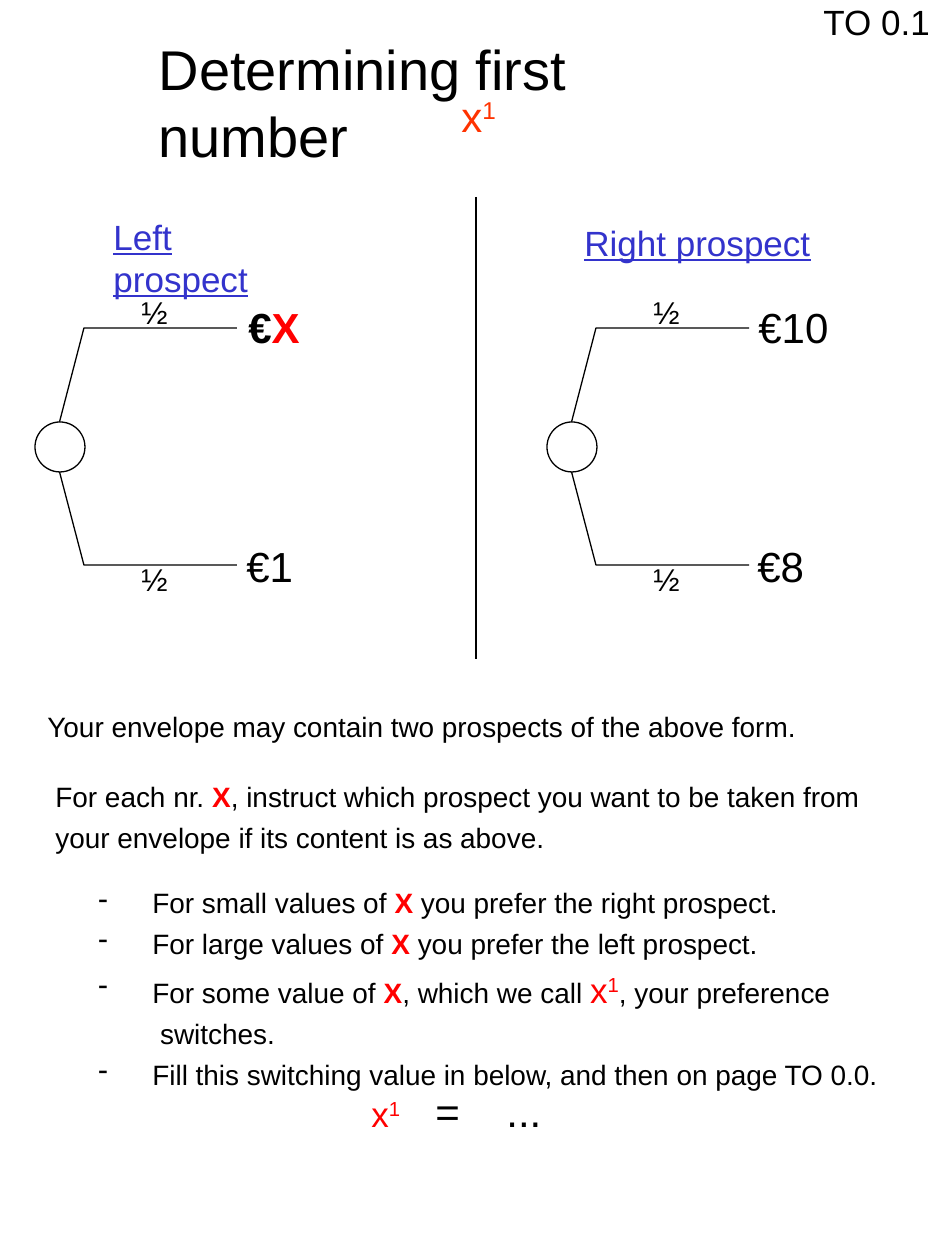
from dataclasses import dataclass

from lxml.etree import SubElement
from pptx import Presentation
from pptx.dml.color import RGBColor
from pptx.enum.shapes import MSO_CONNECTOR as Connector, MSO_SHAPE as Shape
from pptx.enum.text import MSO_ANCHOR as Anchor, MSO_AUTO_SIZE as AutoSize, PP_ALIGN as Align
from pptx.oxml.ns import qn
from pptx.util import Pt

SCALE = 914400 / 126


@dataclass(frozen=True)
class Theme:
    font: str = "Arial"
    ink: str = "000000"
    paper: str = "FFFFFF"
    red: str = "FF0000"
    orange: str = "FF3300"
    blue: str = "3333CC"
    title: int = 32
    amount: int = 24
    heading: int = 20
    chance: int = 18
    body: int = 16
    line: float = 0.75


THEME = Theme()
X = ("X", {"color": THEME.red, "bold": True})
LINE_BREAK = "\n"


def px(length):
    return round(length * SCALE)


def box_px(*lengths):
    return [px(length) for length in lengths]


def rgb(code):
    return RGBColor.from_string(code)


def indexed_x(color, size):
    """Runs for x with the raised index 1."""
    return [("x", {"color": color, "size": size}),
            ("1", {"color": color, "size": size, "raised": True})]


def add_run(paragraph, content, size=THEME.body, color=THEME.ink,
            bold=False, underline=False, raised=False):
    run = paragraph.add_run()
    run.text = content
    font = run.font
    font.name, font.size, font.bold = THEME.font, Pt(size), bold
    font.underline = underline
    font.color.rgb = rgb(color)
    if raised:
        run._r.get_or_add_rPr().set("baseline", "30000")


def add_dash(paragraph, indent):
    props = paragraph._p.get_or_add_pPr()
    props.set("marL", str(px(indent)))
    props.set("indent", str(-px(indent)))
    SubElement(props, qn("a:buFontTx"))
    SubElement(props, qn("a:buChar"), char="-")


def add_tabs(paragraph, stops):
    tabs = SubElement(paragraph._p.get_or_add_pPr(), qn("a:tabLst"))
    for stop in stops:
        SubElement(tabs, qn("a:tab"), pos=str(px(stop)), algn="l")


def write(frame, paragraphs, spacing=None, dash_indent=None, tabs=(), **style):
    """Fill a frame; each paragraph is a string or a list of strings and (string, format) pairs."""
    frame.word_wrap = True
    frame.auto_size = AutoSize.SHAPE_TO_FIT_TEXT
    frame.vertical_anchor = Anchor.TOP
    for index, parts in enumerate(paragraphs):
        paragraph = frame.add_paragraph() if index else frame.paragraphs[0]
        paragraph.alignment = Align.LEFT
        if spacing:
            paragraph.line_spacing = spacing
        if dash_indent:
            add_dash(paragraph, dash_indent)
        if tabs:
            add_tabs(paragraph, tabs)
        for part in [parts] if isinstance(parts, str) else parts:
            if part == LINE_BREAK:
                paragraph.add_line_break()
                continue
            content, own = (part, {}) if isinstance(part, str) else part
            add_run(paragraph, content, **{**style, **own})


def add_text(slide, box, *paragraphs, **style):
    write(slide.shapes.add_textbox(*box_px(*box)).text_frame, paragraphs, **style)


def add_title(slide, box, content):
    title = slide.shapes.title
    title.left, title.top, title.width, title.height = box_px(*box)
    write(title.text_frame, [content], size=THEME.title)


def outline(shape):
    shape.line.color.rgb = rgb(THEME.ink)
    shape.line.width = Pt(THEME.line)


def add_branch(slide, start, bend, end):
    builder = slide.shapes.build_freeform(*start, scale=SCALE)
    builder.add_line_segments([bend, end], close=False)
    branch = builder.convert_to_shape()
    branch.shadow.inherit = False
    branch.fill.background()
    outline(branch)


def add_prospect(slide, left):
    """Draw a chance node with two equally likely branches."""
    for branch_y, chance_y in ((328, 287), (565, 554)):
        add_text(slide, (left + 94, chance_y, 60, 50), "½", size=THEME.chance)
        add_branch(slide, (left + 18, 447), (left + 49, branch_y), (left + 202, branch_y))
    node = slide.shapes.add_shape(Shape.OVAL, *box_px(left, 422, 50, 50))
    node.shadow.inherit = False
    node.fill.solid()
    node.fill.fore_color.rgb = rgb(THEME.paper)
    outline(node)


def add_divider(slide, x, top, bottom):
    divider = slide.shapes.add_connector(Connector.STRAIGHT, *box_px(x, top, x, bottom))
    outline(divider)
    SubElement(divider._element.spPr, qn("a:effectLst"))


def main():
    deck = Presentation()
    deck.slide_width, deck.slide_height = box_px(945, 1260)
    slide = deck.slides.add_slide(deck.slide_layouts[5])

    add_title(slide, (146, 28, 460, 147), "Determining first number")
    add_text(slide, (449, 84, 70, 63), indexed_x(THEME.orange, THEME.amount))
    add_text(slide, (811, -6, 134, 54), "TO 0.1", size=THEME.heading)

    add_divider(slide, 476, 197, 659)
    for left in (35, 547):
        add_prospect(slide, left)
    for box, heading in (((101, 209, 180, 96), "Left prospect"),
                         ((572, 215, 260, 54), "Right prospect")):
        add_text(slide, box, heading, size=THEME.heading,
                 color=THEME.blue, underline=True)
    for left, top, amount in ((236, 295, [("€", {"bold": True}), X]), (234, 534, "€1"),
                              (746, 295, "€10"), (745, 534, "€8")):
        add_text(slide, (left, top, 100, 63), amount, size=THEME.amount)

    add_text(slide, (35, 697, 800, 53),
             "Your envelope may contain two prospects of the above form.", spacing=1.2)
    add_text(slide, (43, 767, 862, 93),
             ["For each nr. ", X, ", instruct which prospect you want to be taken from "
              "your envelope if its content is as above."], spacing=1.2)
    add_text(slide, (86, 873, 820, 224),
             ["For small values of ", X, " you prefer the right prospect."],
             ["For large values of ", X, " you prefer the left prospect."],
             ["For some value of ", X, ", which we call ",
              *indexed_x(THEME.red, THEME.heading), ", your preference",
              LINE_BREAK, " switches."],
             "Fill this switching value in below, and then on page TO 0.0.",
             spacing=1.2, dash_indent=54)
    add_text(slide, (359, 1079, 197, 63),
             [*indexed_x(THEME.red, THEME.heading), "\t=\t..."],
             size=THEME.amount, tabs=(64, 135))

    deck.save("out.pptx")


if __name__ == "__main__":
    main()
